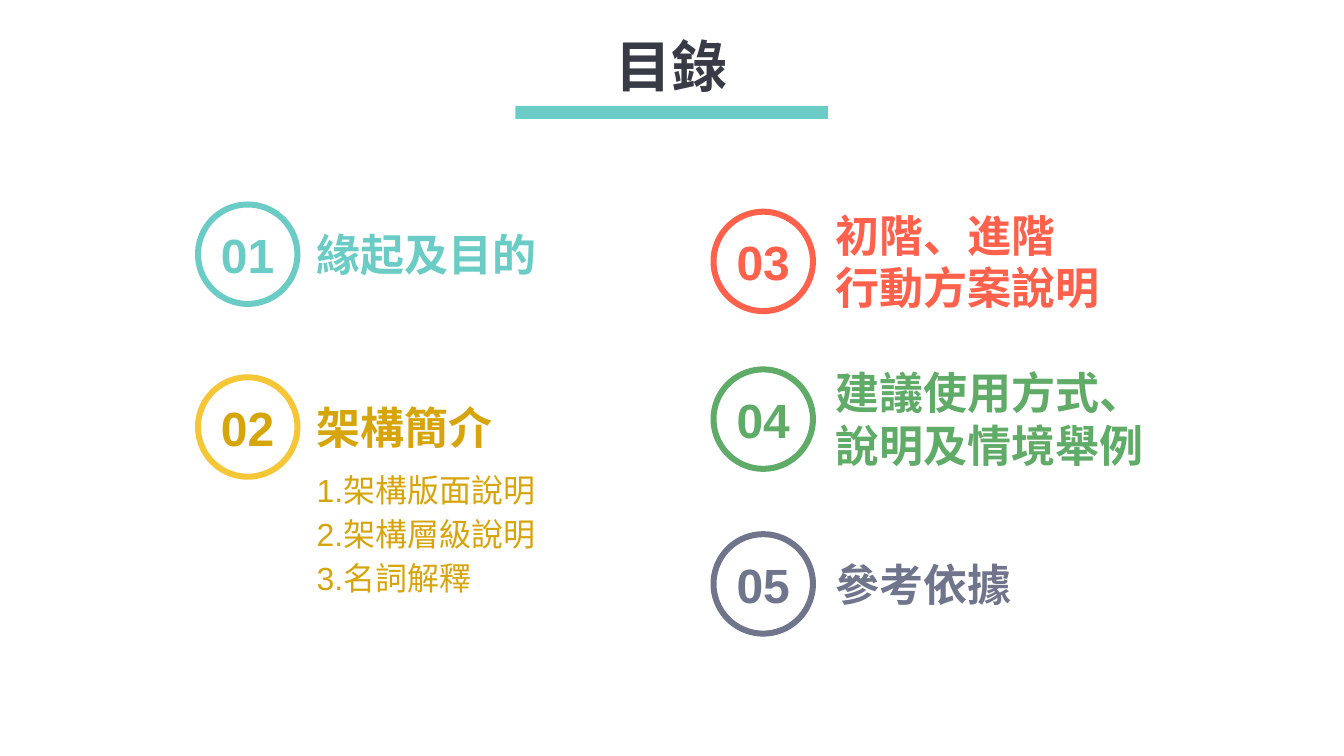
from pptx import Presentation
from pptx.dml.color import RGBColor
from pptx.enum.shapes import MSO_SHAPE as Shape
from pptx.enum.text import MSO_ANCHOR as Anchor, MSO_AUTO_SIZE as AutoSize, PP_ALIGN as Align
from pptx.util import Pt

COLORS = {
    "white": "FFFFFF", "ink": "383B46", "teal": "6BCBC5", "red": "FF614C",
    "yellow": "F5C636", "gold": "D6A40B", "green": "60AB68", "slate": "70758C",
}
FONT = "Arial"
CIRCLE = 99.4
LINE_HEIGHT = 53.3
INSETS = 7.2


def color(name):
    return RGBColor.from_string(COLORS[name])


class AgendaSlide:
    def __init__(self, presentation):
        self.slide = presentation.slides.add_slide(presentation.slide_layouts[5])

    def set_text(self, shape, lines, size, ink, bold=True, align=Align.LEFT,
                 anchor=Anchor.TOP, space_after=0):
        frame = shape.text_frame
        frame.text = "\n".join(lines)
        frame_format = {"word_wrap": True, "auto_size": AutoSize.NONE, "vertical_anchor": anchor}
        for name, value in frame_format.items():
            setattr(frame, name, value)
        for paragraph in frame.paragraphs:
            paragraph.alignment = align
            paragraph.space_after = Pt(space_after)
            for run in paragraph.runs:
                font_format = {"name": FONT, "size": Pt(size), "bold": bold}
                for name, value in font_format.items():
                    setattr(run.font, name, value)
                run.font.color.rgb = color(ink)

    def shape(self, shapes, kind, box, fill, line=None):
        shape = shapes.add_shape(kind, *map(Pt, box))
        shape.shadow.inherit = False
        shape.fill.solid()
        shape.fill.fore_color.rgb = color(fill)
        if line:
            shape.line.color.rgb = color(line)
            shape.line.width = Pt(6)
        else:
            shape.line.fill.background()
        return shape

    def title(self, text, box):
        title = self.slide.shapes.title
        title.left, title.top, title.width, title.height = map(Pt, box)
        self.set_text(title, [text], 56, "ink", align=Align.CENTER, anchor=Anchor.MIDDLE)

    def bar(self, box, fill):
        self.shape(self.slide.shapes, Shape.RECTANGLE, box, fill)

    def text(self, shapes, box, lines, size, ink, **style):
        self.set_text(shapes.add_textbox(*map(Pt, box)), lines, size, ink, **style)

    def item(self, number, left, top, text_left, width, ring, ink, lines, details=()):
        shapes = self.slide.shapes.add_group_shape().shapes
        circle = self.shape(shapes, Shape.OVAL, (left, top, CIRCLE, CIRCLE), "white", ring)
        circle.text_frame.margin_left = circle.text_frame.margin_right = 0
        self.set_text(circle, [f"{number:02d}"], 48, ink, align=Align.CENTER, anchor=Anchor.MIDDLE)
        height = LINE_HEIGHT * len(lines) + INSETS
        text_top = top + (CIRCLE - height) / 2
        self.text(shapes, (text_left, text_top, width, height), lines, 44, ink)
        if details:
            self.text(shapes, (text_left, text_top + 69.8, 252.7, 135.4), details, 32, ink,
                      bold=False, space_after=6)


def main():
    presentation = Presentation()
    presentation.slide_width, presentation.slide_height = Pt(1344), Pt(756)
    agenda = AgendaSlide(presentation)
    agenda.title("目錄", (483, 27.4, 378, 74.9))
    agenda.bar((515.5, 105.8, 312.5, 13), "teal")

    left_column, right_column = (198, 309.6), (713.5, 828)
    details = ["1.架構版面說明", "2.架構層級說明", "3.名詞解釋"]
    items = [
        (left_column, 204.5, 301, "teal", "teal", ["緣起及目的"], []),
        (left_column, 377.3, 212.4, "yellow", "gold", ["架構簡介"], details),
        (right_column, 211.7, 312.5, "red", "red", ["初階、進階", "行動方案說明"], []),
        (right_column, 369.4, 435.6, "green", "green", ["建議使用方式、", "說明及情境舉例"], []),
        (right_column, 534.2, 224.6, "slate", "slate", ["參考依據"], []),
    ]
    for number, (column, top, width, ring, ink, lines, points) in enumerate(items, 1):
        agenda.item(number, column[0], top, column[1], width, ring, ink, lines, points)
    presentation.save("out.pptx")


if __name__ == "__main__":
    main()
